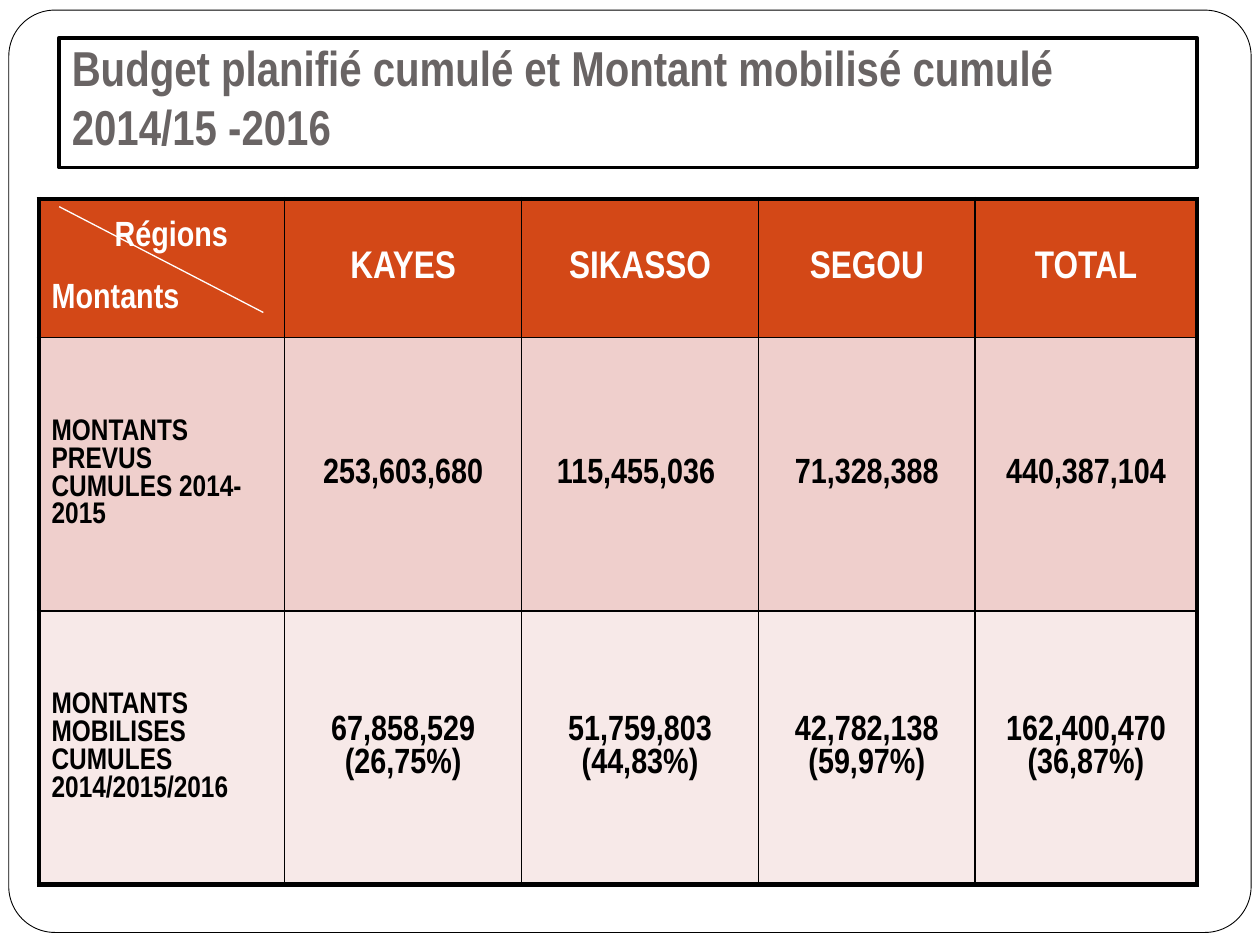
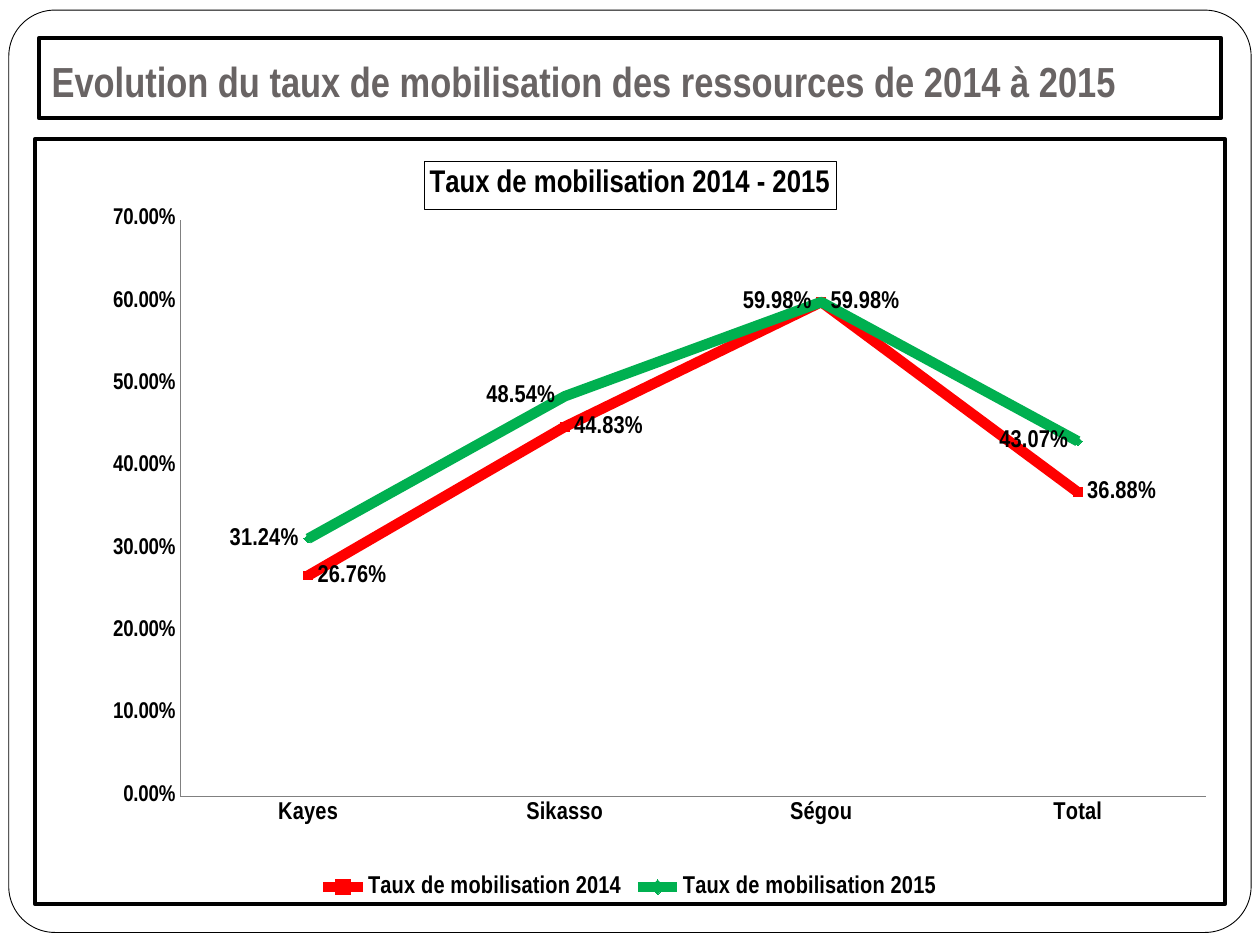
from dataclasses import dataclass
from lxml import etree
from pptx import Presentation, util as u
from pptx.chart.data import CategoryChartData
from pptx.dml.color import RGBColor
from pptx.enum import chart as ch, shapes, text as tx
from pptx.oxml import parse_xml
from pptx.oxml.ns import nsdecls, qn


@dataclass(frozen=True)
class Theme:
    font: str = "Arial Narrow"
    chart_font: str = "Times New Roman"
    ink: RGBColor = RGBColor.from_string("000000")
    paper: RGBColor = RGBColor.from_string("FFFFFF")
    heading: RGBColor = RGBColor.from_string("696464")
    axis: RGBColor = RGBColor.from_string("808080")
    bands: tuple = tuple(map(RGBColor.from_string, ("D34817", "EFCFCC", "F7E9E8")))
    rates: tuple = tuple(map(RGBColor.from_string, ("FF0000", "00B050")))
    heading_sizes: tuple = (28, 24)
    header_size: int = 22
    amount_size: int = 20
    row_label_size: int = 17
    chart_title_size: int = 18
    chart_label_size: int = 14
    axis_size: int = 13
    chart_base_size: int = 10
    thick: float = 2.25


theme = Theme()
deck = Presentation()
deck.slide_width, deck.slide_height = u.Inches(10), u.Inches(7.5)
column, row = deck.slide_width / 100, deck.slide_height / 100


def box(left, top, width, height):
    return [u.Emu(round(share * unit)) for share, unit in
            zip((left, top, width, height), (column, row, column, row))]


def write(frame, lines, size, color=theme.ink, align=tx.PP_ALIGN.LEFT,
          gap=0, first_indent=0):
    frame.text = lines
    frame.word_wrap = True
    for position, paragraph in enumerate(frame.paragraphs):
        paragraph.alignment = align
        paragraph.line_spacing = 1.0
        paragraph.space_before = u.Pt(gap if position else 0)
        if first_indent and position == 0:
            paragraph._p.get_or_add_pPr().set("marL", str(u.Inches(first_indent)))
        font = paragraph.runs[0].font
        font.name, font.size, font.bold = theme.font, u.Pt(size), True
        font.color.rgb = color


layout = deck.slide_layouts[5]
headings = [
    ("Budget planifié cumulé et Montant mobilisé cumulé 2014/15 -2016", (4.7, 4, 90.3, 13.73)),
    ("Evolution du taux de mobilisation des ressources de 2014 à 2015", (3.1, 4, 93.8, 8.53)),
]
for (heading, place), size in zip(headings, theme.heading_sizes):
    title = deck.slides.add_slide(layout).shapes.title
    title.left, title.top, title.width, title.height = box(*place)
    title.line.color.rgb, title.line.width = theme.ink, u.Pt(theme.thick)
    frame = title.text_frame
    frame.auto_size = tx.MSO_AUTO_SIZE.NONE
    frame.vertical_anchor = tx.MSO_ANCHOR.BOTTOM
    frame.margin_left = frame.margin_right = frame.margin_bottom = u.Inches(0.1)
    frame.margin_top = u.Inches(0.05)
    write(frame, heading, size, color=theme.heading)

budget, evolution = deck.slides

page_frame = budget.shapes.add_shape(shapes.MSO_SHAPE.ROUNDED_RECTANGLE, *box(0.7, 1.07, 98.6, 97.6))
page_frame.adjustments[0] = 0.05
page_frame.shadow.inherit = False
page_frame.fill.solid()
page_frame.fill.fore_color.rgb = theme.paper
page_frame.line.color.rgb, page_frame.line.width = theme.ink, u.Pt(0.5)
deck.slide_master.shapes.element.insert(2, page_frame.element)

amounts = [
    ["Régions\nMontants", "KAYES", "SIKASSO", "SEGOU", "TOTAL"],
    ["MONTANTS PREVUS CUMULES 2014-2015", "253,603,680", "115,455,036 ", "71,328,388", "440,387,104"],
    ["MONTANTS MOBILISES CUMULES 2014/2015/2016", "67,858,529\n(26,75%)", "51,759,803\n(44,83%)",
     "42,782,138\n(59,97%)", "162,400,470\n(36,87%)"],
]
widths = [19.5, 18.8, 18.8, 17.2, 17.6]
heights = [14.67, 28.93, 28.93]
grid = budget.shapes.add_table(len(heights), len(widths),
                               *box(3.1, 21.07, sum(widths), sum(heights))).table
for region, width in zip(grid.columns, widths):
    region.width = u.Emu(round(width * column))
for band, height in zip(grid.rows, heights):
    band.height = u.Emu(round(height * row))

for r, entries in enumerate(amounts):
    for c, entry in enumerate(entries):
        cell = grid.cell(r, c)
        cell.vertical_anchor = tx.MSO_ANCHOR.MIDDLE
        cell.fill.solid()
        cell.fill.fore_color.rgb = theme.bands[r]
        if r == 0:
            size = theme.header_size if c else theme.amount_size
        else:
            size = theme.amount_size if c else theme.row_label_size
        corner = r == c == 0
        write(cell.text_frame, entry, size,
              color=theme.ink if r else theme.paper,
              align=tx.PP_ALIGN.CENTER if c else tx.PP_ALIGN.LEFT,
              gap=17 if corner else 0, first_indent=0.5 if corner else 0)
        outer = {"L": c == 0, "R": c == len(widths) - 1, "T": r == 0, "B": r == len(heights) - 1}
        for order, (side, on_edge) in enumerate(outer.items()):
            cell._tc.get_or_add_tcPr().insert(order, parse_xml(
                f'<a:ln{side} {nsdecls("a")} w="{u.Pt(3 if on_edge else 1)}">'
                f'<a:solidFill><a:srgbClr val="{theme.ink}"/></a:solidFill></a:ln{side}>'))

x, y, across, down = box(4.7, 21.87, 16.2, 11.2)
diagonal = budget.shapes.add_connector(shapes.MSO_CONNECTOR.STRAIGHT, x, y, x + across, y + down)
diagonal.line.color.rgb, diagonal.line.width = theme.paper, u.Pt(0.75)
etree.SubElement(diagonal.element.spPr, qn("a:effectLst"))

rates = CategoryChartData(number_format="0.00%")
rates.categories = ["Kayes", "Sikasso", "Ségou", "Total"]
rates.add_series("Taux de mobilisation 2014", [0.2676, 0.4483, 0.5998, 0.3688])
rates.add_series("Taux de mobilisation 2015", [0.3124, 0.4854, 0.5998, 0.4307])
chart = evolution.shapes.add_chart(ch.XL_CHART_TYPE.LINE_MARKERS, *box(2.6, 14.53, 94.8, 81.33), rates).chart
chart.font.name, chart.font.size = theme.chart_font, u.Pt(theme.chart_base_size)
chart.font.color.rgb = theme.ink

chart.has_title = True
write(chart.chart_title.text_frame, "Taux de mobilisation 2014 - 2015", theme.chart_title_size,
      align=tx.PP_ALIGN.CENTER)
chart.chart_title.include_in_layout = False
title_line = chart.chart_title.format.line
title_line.color.rgb, title_line.width = theme.ink, u.Pt(0.25)

chart.has_legend = True
chart.legend.position = ch.XL_LEGEND_POSITION.BOTTOM
chart.legend.include_in_layout = False

values, regions = chart.value_axis, chart.category_axis
values.minimum_scale, values.maximum_scale, values.major_unit = 0, 0.7, 0.1
values.has_major_gridlines = False
values.tick_labels.number_format = "0.00%"
values.tick_labels.number_format_is_linked = False
for axis in (values, regions):
    axis.major_tick_mark = axis.minor_tick_mark = ch.XL_TICK_MARK.NONE
    axis.format.line.color.rgb, axis.format.line.width = theme.axis, u.Pt(0.25)

label_fonts = [(values.tick_labels.font, theme.axis_size),
               (regions.tick_labels.font, theme.chart_label_size),
               (chart.legend.font, theme.chart_label_size)]
markers = [ch.XL_MARKER_STYLE.SQUARE, ch.XL_MARKER_STYLE.DIAMOND]
sides = [ch.XL_LABEL_POSITION.RIGHT, ch.XL_LABEL_POSITION.LEFT]
for year, color, marker, side in zip(chart.plots[0].series, theme.rates, markers, sides):
    year.smooth = False
    year.format.line.color.rgb, year.format.line.width = color, u.Pt(6)
    year.marker.style, year.marker.size = marker, 5
    year.marker.format.fill.solid()
    year.marker.format.fill.fore_color.rgb = color
    year.marker.format.line.color.rgb = color
    labels = year.data_labels
    labels.show_value, labels.position = True, side
    labels.number_format, labels.number_format_is_linked = "0.00%", False
    label_fonts.append((labels.font, theme.chart_label_size))
for font, size in label_fonts:
    font.name, font.size, font.bold = theme.font, u.Pt(size), True
    font.color.rgb = theme.ink

chart_xml = chart.element.find(qn("c:chart"))
chart_xml.addnext(parse_xml(
    f'<c:spPr {nsdecls("c", "a")}><a:noFill/><a:ln w="{u.Pt(theme.thick)}">'
    f'<a:solidFill><a:srgbClr val="{theme.ink}"/></a:solidFill></a:ln></c:spPr>'))
plot_area = chart_xml.find(qn("c:plotArea"))
for automatic in plot_area.findall(qn("c:layout")):
    plot_area.remove(automatic)
position = "".join(f'<c:{key} val="{share}"/>' for key, share in
                   dict(layoutTarget="inner", xMode="edge", yMode="edge",
                        x=0.122, y=0.105, w=0.862, h=0.754).items())
plot_area.insert(0, parse_xml(
    f'<c:layout {nsdecls("c")}><c:manualLayout>{position}</c:manualLayout></c:layout>'))

deck.save("out.pptx")
